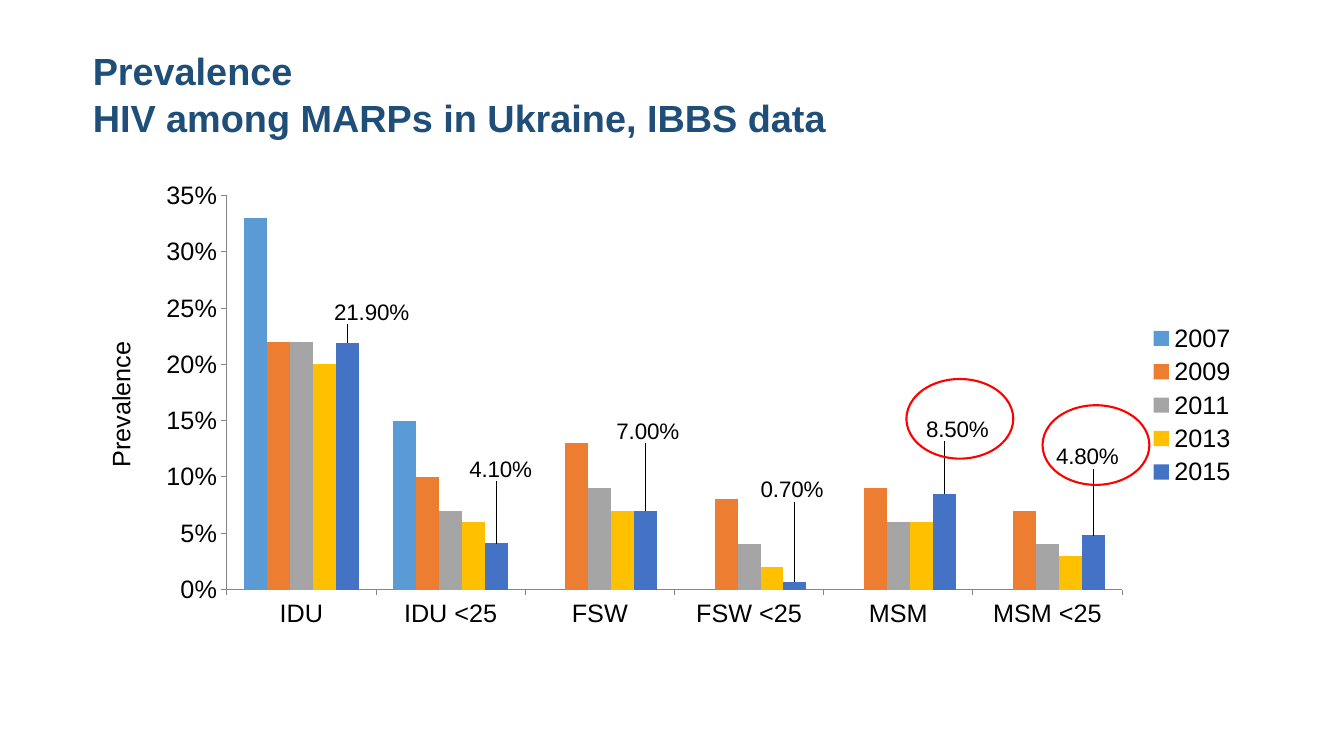
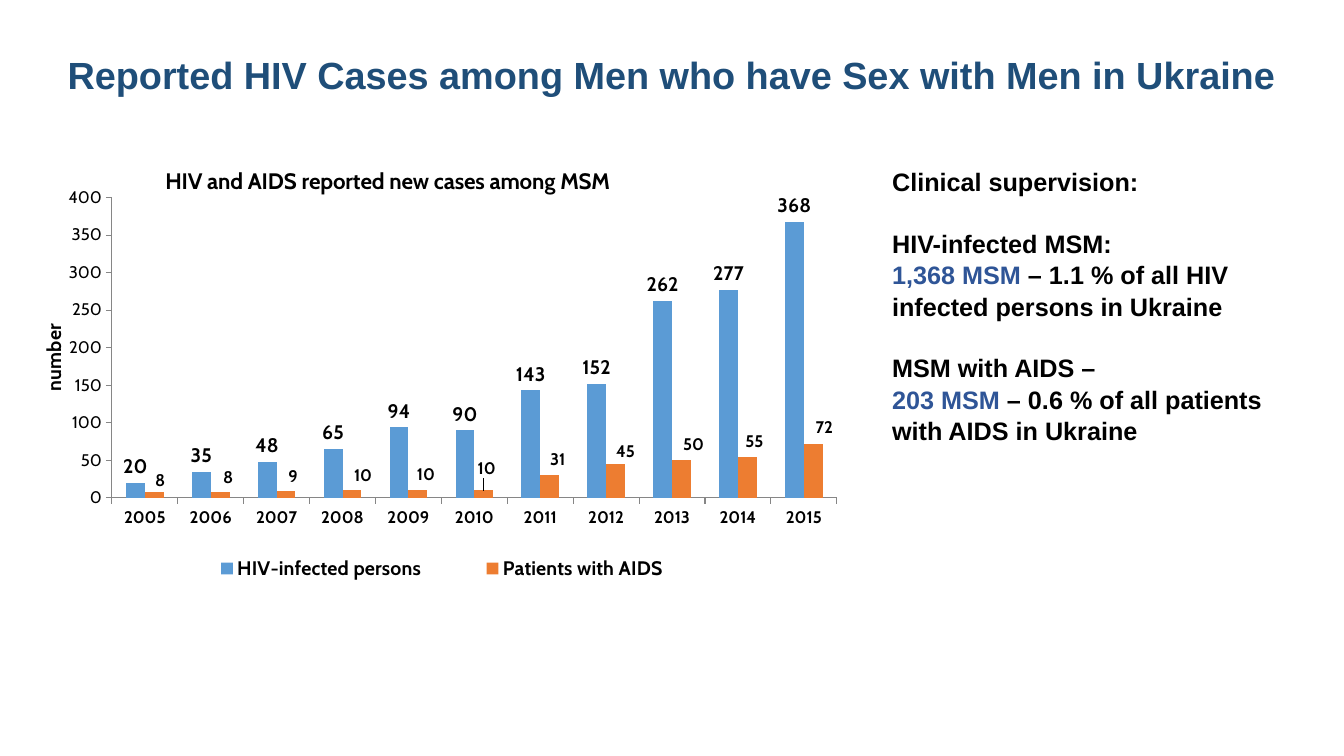
from lxml import etree
from pptx import Presentation
from pptx.chart.data import CategoryChartData
from pptx.dml.color import RGBColor
from pptx.enum.chart import XL_CHART_TYPE as ChartType
from pptx.enum.chart import XL_LABEL_POSITION as LabelPosition
from pptx.enum.chart import XL_LEGEND_POSITION as LegendPosition
from pptx.enum.chart import XL_TICK_MARK as TickMark
from pptx.enum.shapes import MSO_SHAPE as Shape
from pptx.enum.text import MSO_ANCHOR as Anchor
from pptx.enum.text import MSO_AUTO_SIZE as AutoSize
from pptx.enum.text import PP_ALIGN as Align
from pptx.oxml.ns import qn
from pptx.util import Inches, Pt

# Shared style
SANS, CABIN = "Arial", "Cabin"
BLACK, NAVY, BLUE, RED, GREY = "000000", "1F4E79", "2F5597", "FF0000", "868686"
SERIES_COLOURS = ["5B9BD5", "ED7D31", "A5A5A5", "FFC000", "4472C4"]
LINE_SPACING = 1.04


def colour(value):
    return RGBColor.from_string(value)


def set_font(font, size, name=SANS, bold=False, tint=BLACK):
    font.size, font.name, font.bold = Pt(size), name, bold
    font.color.rgb = colour(tint)


# Text and shapes
def add_slide(deck, title, left, top, width, height):
    page = deck.slides.add_slide(deck.slide_layouts[5])
    holder = page.shapes.title
    holder.left, holder.top = Inches(left), Inches(top)
    holder.width, holder.height = Inches(width), Inches(height)
    frame = holder.text_frame
    frame.text = title
    frame.auto_size, frame.vertical_anchor = AutoSize.NONE, Anchor.MIDDLE
    para = frame.paragraphs[0]
    para.alignment, para.line_spacing = Align.LEFT, LINE_SPACING
    set_font(para.font, 27, bold=True, tint=NAVY)
    return page


def add_notes_box(page, blocks, left, top, width, height):
    """Each block is a list of lines; each line is a list of (text, colour)."""
    box = page.shapes.add_textbox(Inches(left), Inches(top), Inches(width), Inches(height))
    frame = box.text_frame
    frame.word_wrap = True
    para = None
    for block in blocks:
        for number, line in enumerate(block):
            starts_block = para is not None and number == 0
            para = frame.add_paragraph() if para is not None else frame.paragraphs[0]
            para.line_spacing = LINE_SPACING
            para.space_before = Pt(21.6 if starts_block else 0)
            set_font(para.font, 18, bold=True)
            for text, tint in line:
                span = para.add_run()
                span.text = text
                if tint != BLACK:
                    span.font.color.rgb = colour(tint)


def add_ring(page, left, top):
    ring = page.shapes.add_shape(Shape.OVAL, Inches(left), Inches(top), Inches(1.06), Inches(0.79))
    ring.shadow.inherit = False
    ring.fill.background()
    ring.line.color.rgb = colour(RED)
    ring.line.width = Pt(1.5)


# Charts
def place(element, index, size, inches, inner=False):
    """Put a manual layout, given in inches, on a part of a chart."""
    for old in element.findall(qn("c:layout")):
        element.remove(old)
    layout = etree.Element(qn("c:layout"))
    manual = etree.SubElement(layout, qn("c:manualLayout"))
    settings = [("layoutTarget", "inner")] if inner else []
    if len(inches) == 4:
        settings += [("xMode", "edge"), ("yMode", "edge")]
    shares = [length / size[i % 2] for i, length in enumerate(inches)]
    settings += [(key, f"{share:.4f}") for key, share in zip("xywh", shares)]
    for key, value in settings:
        etree.SubElement(manual, qn(f"c:{key}")).set("val", value)
    element.insert(index, layout)


def add_columns(page, position, categories, series, plot, font_name):
    """Each series is (name, values, number format)."""
    data = CategoryChartData()
    data.categories = categories
    for name, values, number_format in series:
        data.add_series(name, values, number_format)
    frame = page.shapes.add_chart(ChartType.COLUMN_CLUSTERED, *map(Inches, position), data)
    chart = frame.chart
    chart.has_title = False
    set_font(chart.font, 18, font_name)
    columns = chart.plots[0]
    columns.gap_width, columns.vary_by_categories = 150, False
    for bars, tint in zip(columns.series, SERIES_COLOURS):
        bars.format.fill.solid()
        bars.format.fill.fore_color.rgb = colour(tint)
        bars.invert_if_negative = False
    place(chart.element.xpath("c:chart/c:plotArea")[0], 0, position[2:], plot, inner=True)
    return chart


def style_axes(chart, title, top, step, number_format, size, title_size, font_name, bold):
    for axis in (chart.category_axis, chart.value_axis):
        axis.has_major_gridlines = False
        axis.major_tick_mark, axis.minor_tick_mark = TickMark.OUTSIDE, TickMark.NONE
        axis.format.line.color.rgb = colour(GREY)
        axis.format.line.width = Pt(0.75)
    set_font(chart.category_axis.tick_labels.font, size, font_name, bold)
    values = chart.value_axis
    values.minimum_scale, values.maximum_scale, values.major_unit = 0, top, step
    labels = values.tick_labels
    set_font(labels.font, size, font_name)
    labels.number_format, labels.number_format_is_linked = number_format, False
    values.axis_title.text_frame.text = title
    set_font(values.axis_title.text_frame.paragraphs[0].font, title_size, font_name, bold)


def add_legend(chart, position, size, font_name, bold=False):
    chart.has_legend = True
    chart.legend.position = position
    chart.legend.include_in_layout = False
    set_font(chart.legend.font, size, font_name, bold)


def label_series(bars, size, font_name, bold=False, number_format="General"):
    labels = bars.data_labels
    labels.show_value, labels.position = True, LabelPosition.OUTSIDE_END
    labels.number_format, labels.number_format_is_linked = number_format, False
    set_font(labels.font, size, font_name, bold)


def shift_labels(chart, bars, chart_size, offsets, size, font_name, bold=False):
    """Move the labels of one series by (right, down) offsets in inches."""
    for index in range(len(offsets)):
        label = bars.points[index].data_label
        label.position = LabelPosition.OUTSIDE_END
        set_font(label.font, size, font_name, bold)
    for element, offset in zip(chart.element.xpath(".//c:dLbl"), offsets):
        place(element, 1, chart_size, offset)


# Slides
def build_prevalence(deck):
    page = add_slide(deck, "Prevalence\vHIV among MARPs in Ukraine, IBBS data", 0.82, 0.13, 10.82, 1.58)
    position = (0.82, 1.71, 11.55, 4.62)
    series = [
        ("2007", [0.33, 0.15, None, None, None, None], "0%"),
        ("2009", [0.22, 0.1, 0.13, 0.08, 0.09, 0.07], "0%"),
        ("2011", [0.22, 0.07, 0.09, 0.04, 0.06, 0.04], "0%"),
        ("2013", [0.2, 0.06, 0.07, 0.02, 0.06, 0.03], "0%"),
        ("2015", [0.219, 0.041, 0.07, 0.007, 0.085, 0.048], "0.00%"),
    ]
    groups = [group + age for group in ("IDU", "FSW", "MSM") for age in ("", " <25")]
    chart = add_columns(page, position, groups, series, (1.43, 0.23, 8.88, 3.91), SANS)
    style_axes(chart, "Prevalence", 0.35, 0.05, "0%", 18, 18, SANS, False)
    add_legend(chart, LegendPosition.RIGHT, 18, SANS)
    latest = chart.plots[0].series[-1]
    label_series(latest, 16, SANS, number_format="0.00%")
    offsets = [(0.24, -0.14), (0.04, -0.57), (0.02, -0.63),
               (-0.03, -0.75), (0.13, -0.48), (-0.06, -0.62)]
    shift_labels(chart, latest, position[2:], offsets, 16, SANS)
    for left, top in ((8.99, 3.76), (10.34, 4.02)):
        add_ring(page, left, top)


def build_reported_cases(deck):
    page = add_slide(deck, "Reported HIV Cases among Men who have Sex with Men in Ukraine", 0.57, 0, 12.76, 1.45)
    add_notes_box(page, [
        [[("Clinical supervision:", BLACK)]],
        [[("HIV-infected MSM:", BLACK)],
         [("1,368 MSM ", BLUE), ("– 1.1 % of all HIV", BLACK)],
         [("infected persons in Ukraine", BLACK)]],
        [[("MSM with AIDS –", BLACK)],
         [("203 MSM ", BLUE), ("– 0.6 % of all patients", BLACK)],
         [("with AIDS in Ukraine", BLACK)]],
    ], 8.75, 1.59, 4.07, 4.17)

    position = (0.36, 1.41, 8.04, 4.52)
    size = position[2:]
    series = [
        ("HIV-infected persons", [20, 35, 48, 65, 94, 90, 143, 152, 262, 277, 368], "General"),
        ("Patients with AIDS", [8, 8, 9, 10, 10, 10, 31, 45, 50, 55, 72], "General"),
    ]
    years = [str(year) for year in range(2005, 2016)]
    chart = add_columns(page, position, years, series, (0.75, 0.55, 7.19, 2.98), CABIN)
    style_axes(chart, "number", 400, 50, "General", 12, 14, CABIN, True)

    # Chart title and legend
    chart.has_title = True
    chart.chart_title.text_frame.text = "HIV and AIDS reported new cases among MSM"
    set_font(chart.chart_title.text_frame.paragraphs[0].font, 16, CABIN, True)
    place(chart.element.xpath("c:chart/c:title")[0], 1, size, (1.24, 0.2, 4.4, 0.27))
    add_legend(chart, LegendPosition.BOTTOM, 14, CABIN, True)
    place(chart.element.xpath("c:chart/c:legend")[0], 1, size, (1.25, 4.05, 5.55, 0.36))

    # Column labels
    infected, patients = chart.plots[0].series
    label_series(infected, 14, CABIN, True)
    label_series(patients, 12, CABIN, True)
    offsets = [(0.06, 0.03), (0.08, 0), (0.07, 0), (0.11, -0.01), (0.08, -0.02), (0.03, -0.08),
               (0.08, -0.01), (0.1, 0.02), (0.12, -0.02), (0.07, -0.01), (0.11, -0.02)]
    shift_labels(chart, patients, size, offsets, 12, CABIN, True)


def main():
    deck = Presentation()
    deck.slide_width, deck.slide_height = Inches(13.33), Inches(7.5)
    build_prevalence(deck)
    build_reported_cases(deck)
    deck.save("out.pptx")


if __name__ == "__main__":
    main()
